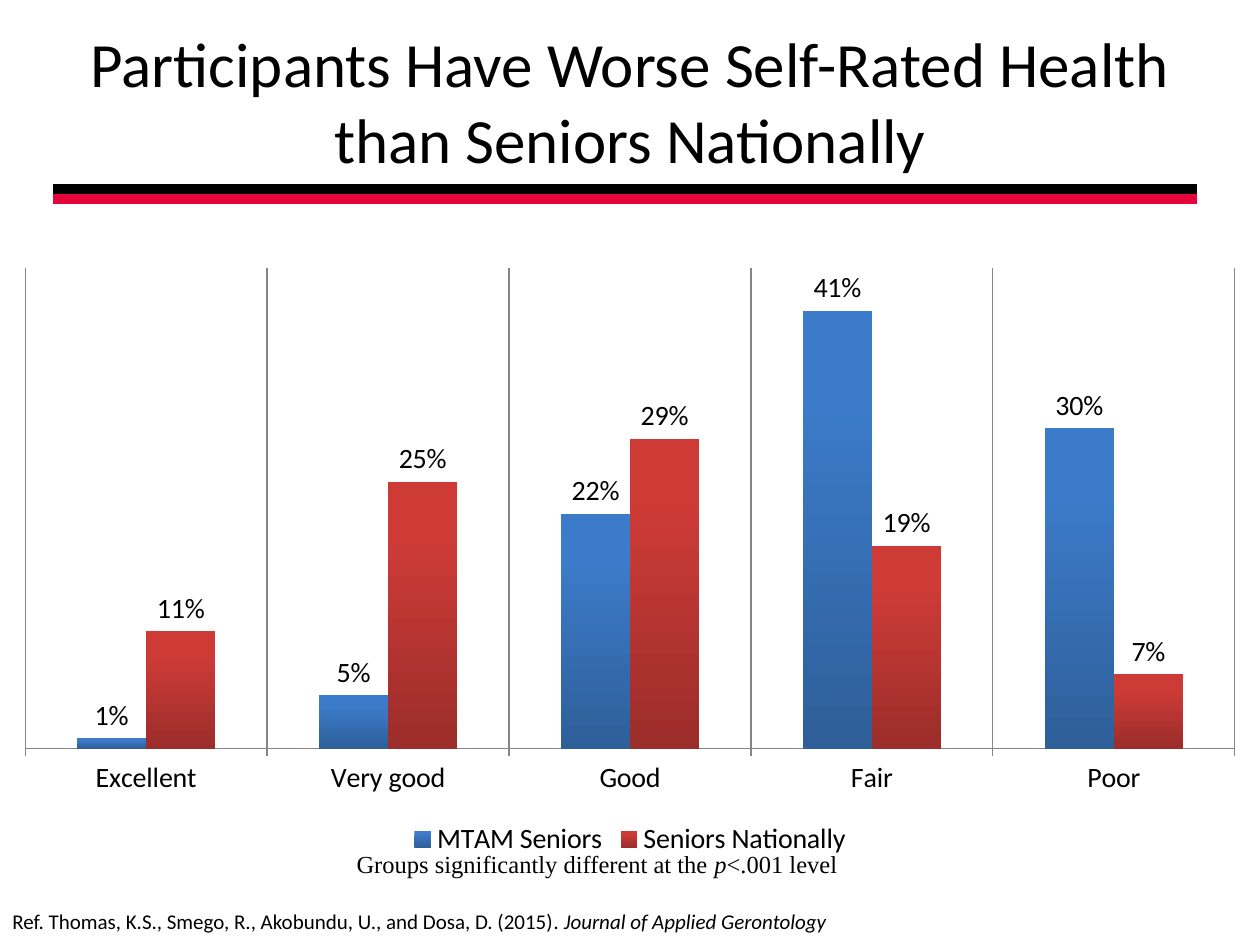
from pptx import Presentation
from pptx.chart.data import CategoryChartData as Data
from pptx.dml.color import RGBColor
from pptx.enum.chart import XL_CHART_TYPE as Kind, XL_LABEL_POSITION as Spot
from pptx.enum.chart import XL_LEGEND_POSITION as Side, XL_TICK_MARK as Tick
from pptx.enum.shapes import MSO_CONNECTOR as Link
from pptx.enum.text import MSO_ANCHOR as Anchor, PP_ALIGN as Align
from pptx.oxml.ns import qn
from pptx.util import Inches, Pt
from lxml.etree import SubElement

BLACK = RGBColor(0, 0, 0)
RED = RGBColor(0xE5, 0x05, 0x3A)
GREY = RGBColor(0x86, 0x86, 0x86)
TITLE = "Participants Have Worse Self-Rated Health than Seniors Nationally"
RULES = [(1.5, BLACK), (1.58, RED)]
CATS = ["Excellent", "Very good", "Good", "Fair", "Poor"]
SERIES = [
    ("MTAM Seniors", [0.01, 0.05, 0.22, 0.41, 0.3],
     RGBColor(0x3C, 0x7B, 0xC9), RGBColor(0x2E, 0x5F, 0x99)),
    ("Seniors Nationally", [0.11, 0.25, 0.29, 0.19, 0.07],
     RGBColor(0xCE, 0x3B, 0x37), RGBColor(0x9B, 0x2D, 0x2A)),
]
NOTES = [
    ((-0.17, 6.69, 10, 0.34), "Times New Roman", 14, Align.CENTER,
     [("Groups significantly different at the ", False), ("p", True),
      ("<.001 level\t", False)]),
    ((0, 7.16, 8.6, 0.3), "Calibri", 12, Align.LEFT,
     [("Ref. Thomas, K.S., Smego, R., Akobundu, U., and Dosa, D. (2015)", False),
      (". Journal of Applied Gerontology", True)]),
]


def style(font, size, name="Calibri"):
    font.size, font.name = Pt(size), name
    font.color.rgb = BLACK


def add_rule(slide, y, color):
    rule = slide.shapes.add_connector(
        Link.STRAIGHT, Inches(0.42), Inches(y), Inches(9.5), Inches(y))
    rule.line.color.rgb, rule.line.width = color, Pt(6)
    SubElement(rule._element.spPr, qn("a:effectLst"))


def set_title(slide):
    title = slide.shapes.title
    title.left, title.top, title.width, title.height = map(
        Inches, (0.5, 0.17, 9, 1.25))
    frame = title.text_frame
    frame.vertical_anchor, frame.word_wrap = Anchor.MIDDLE, True
    para = frame.paragraphs[0]
    para.alignment = Align.CENTER
    run = para.add_run()
    run.text = TITLE
    style(run.font, 36)


def add_bars(slide):
    data = Data(number_format="0%")
    data.categories = CATS
    for name, vals, *_ in SERIES:
        data.add_series(name, vals)
    chart = slide.shapes.add_chart(
        Kind.COLUMN_CLUSTERED, *map(Inches, (0, 2.03, 10, 4.81)), data).chart
    style(chart.font, 16)
    chart.has_title = False
    chart.has_legend = True
    chart.legend.position = Side.BOTTOM
    chart.legend.include_in_layout = False

    axis = chart.category_axis
    axis.has_major_gridlines = True
    axis.major_tick_mark = Tick.OUTSIDE
    for line in (axis.format.line, axis.major_gridlines.format.line):
        line.color.rgb, line.width = GREY, Pt(0.75)
    scale = chart.value_axis
    scale.visible = scale.has_major_gridlines = False
    scale.minimum_scale, scale.maximum_scale = 0, 0.45

    plot = chart.plots[0]
    plot.gap_width, plot.overlap, plot.vary_by_categories = 150, 0, False
    for bars, (_, _, light, dark) in zip(plot.series, SERIES):
        fill = bars.format.fill
        fill.gradient()
        fill.gradient_angle = 270
        for stop, place, color in zip(fill.gradient_stops, (0.2, 1), (light, dark)):
            stop.position, stop.color.rgb = place, color
        labels = bars.data_labels
        labels.show_value = True
        labels.number_format, labels.number_format_is_linked = "0%", False
        labels.position = Spot.OUTSIDE_END
        style(labels.font, 16)


def add_note(slide, box, face, size, align, runs):
    frame = slide.shapes.add_textbox(*map(Inches, box)).text_frame
    frame.word_wrap = True
    para = frame.paragraphs[0]
    para.alignment = align
    for text, slant in runs:
        run = para.add_run()
        run.text = text
        style(run.font, size, face)
        run.font.italic = slant


def main():
    """Build the self-rated health slide."""
    deck = Presentation()
    deck.slide_width, deck.slide_height = Inches(10), Inches(7.5)
    slide = deck.slides.add_slide(deck.slide_layouts[5])
    for rule in RULES:
        add_rule(slide, *rule)
    set_title(slide)
    add_bars(slide)
    for note in NOTES:
        add_note(slide, *note)
    deck.save("out.pptx")


if __name__ == "__main__":
    main()
